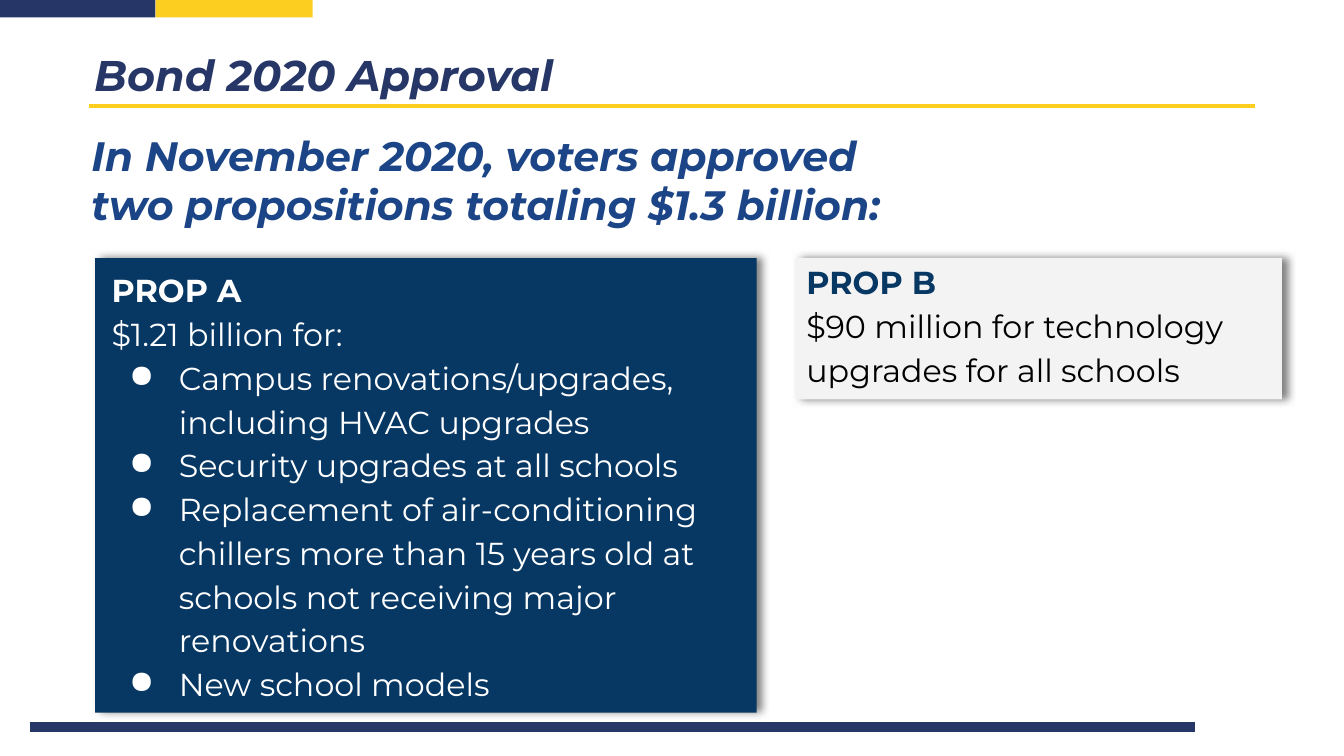
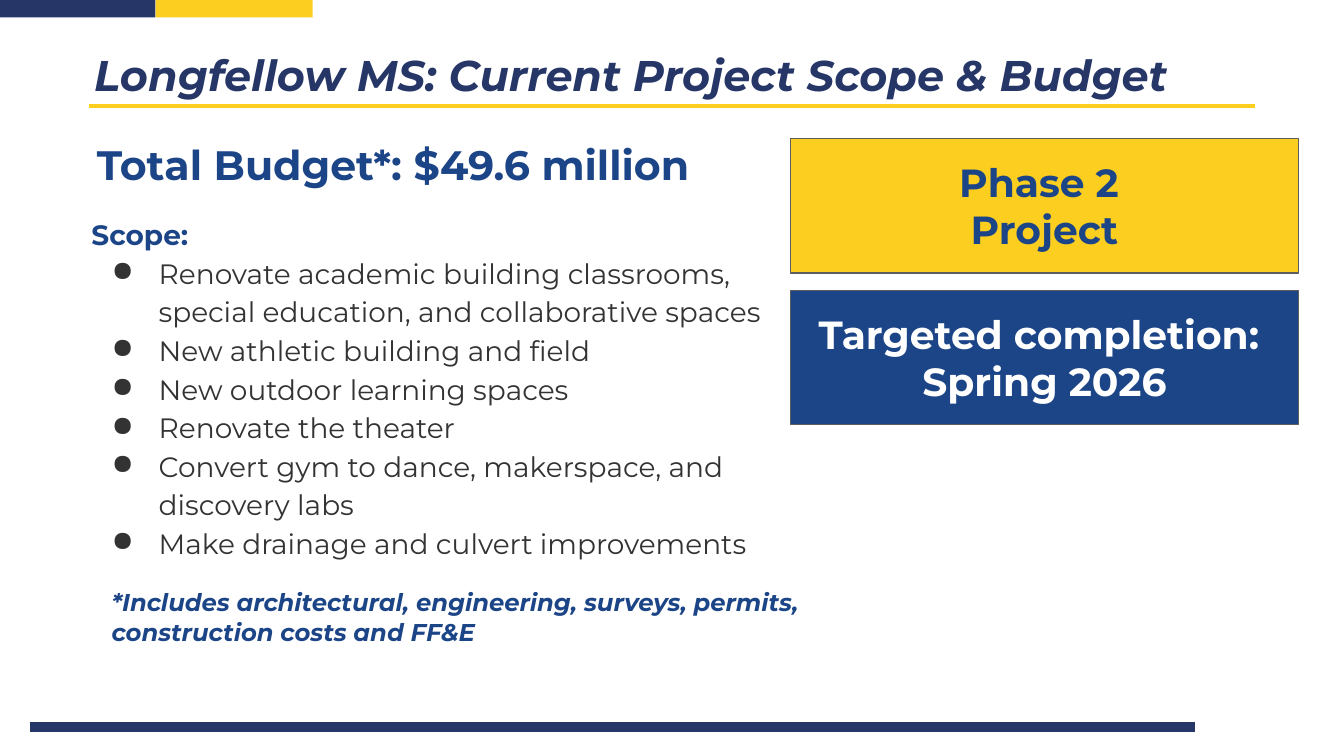
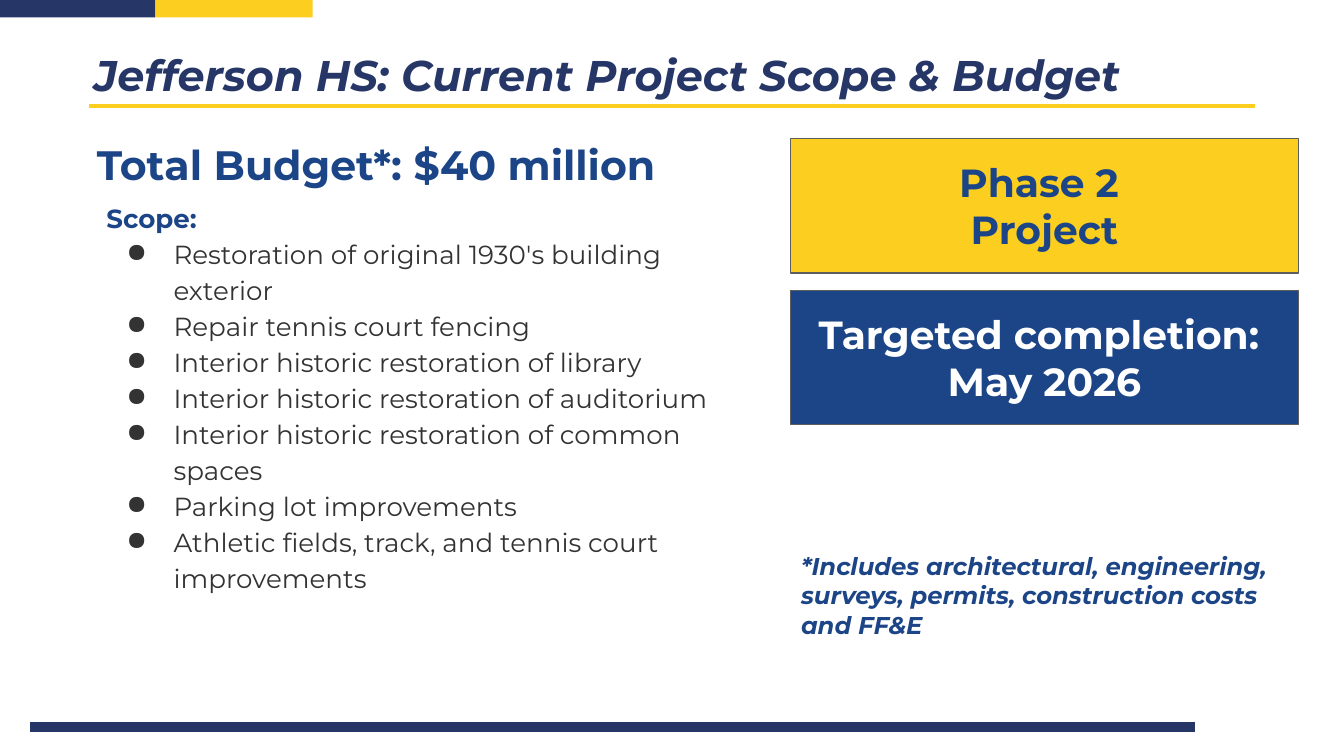
from dataclasses import dataclass, replace
from typing import Optional

from lxml.etree import SubElement
from pptx import Presentation
from pptx.dml.color import RGBColor
from pptx.enum.shapes import MSO_CONNECTOR, MSO_SHAPE
from pptx.enum.text import MSO_ANCHOR, MSO_AUTO_SIZE, PP_ALIGN
from pptx.oxml.ns import qn
from pptx.util import Cm, Pt

FONT = "Montserrat"
NAVY, YELLOW, BLUE, DEEP_BLUE = "253667", "FBCE20", "1C4587", "073763"
WHITE, BLACK, CHARCOAL, GREY, PALE = "FFFFFF", "000000", "333333", "5E5E5E", "F3F3F3"


@dataclass(frozen=True)
class Box:
    """Position and size in centimetres."""
    left: float
    top: float
    width: float
    height: float

    def lengths(self) -> tuple:
        return Cm(self.left), Cm(self.top), Cm(self.width), Cm(self.height)


@dataclass(frozen=True)
class Style:
    size: float
    color: str
    bold: bool = True
    italic: bool = False
    spacing: float = 1.0
    hanging: Optional[float] = None  # bullet indent in centimetres
    align: PP_ALIGN = PP_ALIGN.LEFT


@dataclass(frozen=True)
class Line:
    text: str
    style: Style


@dataclass(frozen=True)
class Project:
    title: str
    budget: str
    completion: str
    scope: tuple
    scope_size: float
    scope_box: Box
    note_box: Box


TITLE = Style(23, NAVY, italic=True)
HEADLINE = Style(22, BLUE, italic=True)
BUDGET = Style(22, BLUE)
NOTE = Style(13, BLUE, italic=True)
PANEL = Style(21, BLUE, align=PP_ALIGN.CENTER)
PROP_HEAD = Style(17, WHITE, spacing=1.15)
PROP_TEXT = replace(PROP_HEAD, bold=False)
PROP_ITEM = replace(PROP_TEXT, hanging=0.94)

TITLE_BOX = Box(1.68, 0.86, 22.02, 1.09)
BUDGET_BOX = Box(1.78, 2.59, 13.16, 1.04)
PANEL_BOX = Box(14.94, 2.62, 9.6, 2.54)
PANEL_PITCH = 2.87
PANEL_PADDING = 0.31
BAND = Box(-0.03, 0, 2.97, 0.33)

PROP_A_ITEMS = (
    "Campus renovations/upgrades, including HVAC upgrades",
    "Security upgrades at all schools",
    "Replacement of air-conditioning chillers more than 15 years old at "
    "schools not receiving major renovations",
    "New school models",
)
BUDGET_NOTE = ("*Includes architectural, engineering, surveys, permits, "
               "construction costs and FF&E")

PROJECTS = (
    Project(
        "Longfellow MS: Current Project Scope & Budget", "$49.6 million", "Spring 2026",
        ("Renovate academic building classrooms, special education, "
         "and collaborative spaces",
         "New athletic building and field",
         "New outdoor learning spaces",
         "Renovate the theater",
         "Convert gym to dance, makerspace, and discovery labs",
         "Make drainage and culvert improvements"),
        15, Box(1.68, 4.01, 13.23, 6.68), Box(2.06, 11.05, 13.16, 1.22)),
    Project(
        "Jefferson HS: Current Project Scope & Budget", "$40 million", "May 2026",
        ("Restoration of original 1930's building exterior",
         "Repair tennis court fencing",
         "Interior historic restoration of library",
         "Interior historic restoration of auditorium",
         "Interior historic restoration of common spaces",
         "Parking lot improvements",
         "Athletic fields, track, and tennis court improvements"),
        14, Box(1.96, 3.78, 12.17, 7.49), Box(15.09, 10.36, 9.6, 1.78)),
)


def rgb(color: str) -> RGBColor:
    return RGBColor.from_string(color)


def add_bullet(paragraph, style: Style) -> None:
    properties = paragraph._p.get_or_add_pPr()
    properties.set("marL", str(Cm(1.27)))
    properties.set("indent", str(-Cm(style.hanging)))
    bullet_color = SubElement(properties, qn("a:buClr"))
    SubElement(bullet_color, qn("a:srgbClr"), val=style.color)
    SubElement(properties, qn("a:buChar"), char="●")


def write(frame, lines: list, side_inset: float = 0.05,
          anchor: MSO_ANCHOR = MSO_ANCHOR.MIDDLE) -> None:
    """Fill a text frame with one paragraph per line."""
    frame.word_wrap = True
    frame.auto_size = MSO_AUTO_SIZE.SHAPE_TO_FIT_TEXT
    frame.vertical_anchor = anchor
    frame.margin_left = frame.margin_right = Cm(side_inset)
    frame.margin_top = frame.margin_bottom = Cm(0.05)
    for number, line in enumerate(lines):
        paragraph = frame.add_paragraph() if number else frame.paragraphs[0]
        style = line.style
        paragraph.text = line.text
        paragraph.alignment = style.align
        paragraph.line_spacing = style.spacing
        if style.hanging is not None:
            add_bullet(paragraph, style)
        font = paragraph.font
        font.name, font.size = FONT, Pt(style.size)
        font.bold, font.italic = style.bold, style.italic
        font.color.rgb = rgb(style.color)


def add_text(slide, box: Box, *lines: Line) -> None:
    write(slide.shapes.add_textbox(*box.lengths()).text_frame, lines)


def add_block(slide, box: Box, fill: str, outline: Optional[str] = None,
              shadowed: bool = False) -> None:
    block = slide.shapes.add_shape(MSO_SHAPE.RECTANGLE, *box.lengths())
    block.shadow.inherit = False
    block.fill.solid()
    block.fill.fore_color.rgb = rgb(fill)
    if outline:
        block.line.color.rgb = rgb(outline)
        block.line.width = Pt(0.75)
    else:
        block.line.fill.background()
    if shadowed:
        effects = block._element.spPr.find(qn("a:effectLst"))
        shadow = SubElement(effects, qn("a:outerShdw"), blurRad=str(Pt(4.5)),
                            dist=str(Pt(3)), dir="0", algn="bl", rotWithShape="0")
        shadow_color = SubElement(shadow, qn("a:srgbClr"), val=BLACK)
        SubElement(shadow_color, qn("a:alpha"), val="50000")


def add_rule(slide, left: float, right: float, height: float,
             color: str, weight: float) -> None:
    rule = slide.shapes.add_connector(
        MSO_CONNECTOR.STRAIGHT, Cm(left), Cm(height), Cm(right), Cm(height))
    rule.line.color.rgb = rgb(color)
    rule.line.width = Pt(weight)
    SubElement(rule._element.spPr, qn("a:effectLst"))


def add_titled_slide(deck, title: str):
    """Add a slide with the shared bands, rules and title."""
    slide = deck.slides.add_slide(deck.slide_layouts[5])
    add_rule(slide, 0.56, 22.58, 13.74, NAVY, 5)
    for number, color in enumerate((NAVY, YELLOW)):
        add_block(slide, replace(BAND, left=BAND.left + number * BAND.width), color)
    add_rule(slide, 1.68, 23.72, 2.01, YELLOW, 2)
    heading = slide.shapes.title
    heading.left, heading.top, heading.width, heading.height = TITLE_BOX.lengths()
    write(heading.text_frame, [Line(title, TITLE)], 0.1, MSO_ANCHOR.TOP)
    return slide


def add_panel(slide, position: int, fill: str, color: str, *texts: str) -> None:
    box = replace(PANEL_BOX, top=PANEL_BOX.top + position * PANEL_PITCH)
    add_block(slide, box, fill, GREY)
    label_box = replace(box, top=box.top + PANEL_PADDING,
                        height=box.height - 2 * PANEL_PADDING)
    style = replace(PANEL, color=color)
    add_text(slide, label_box, *(Line(text, style) for text in texts))


def add_approval_slide(deck) -> None:
    slide = add_titled_slide(deck, "Bond 2020 Approval")
    add_block(slide, Box(15.04, 4.88, 9.19, 2.67), PALE, shadowed=True)
    add_block(slide, Box(1.8, 4.88, 12.5, 8.59), DEEP_BLUE, shadowed=True)
    add_text(slide, Box(1.68, 2.39, 22.53, 2),
             Line("In November 2020, voters approved", HEADLINE),
             Line("two propositions totaling $1.3 billion:", HEADLINE))
    add_text(slide, Box(2.06, 4.9, 12.32, 8.51),
             Line("PROP A", PROP_HEAD),
             Line("$1.21 billion for:", PROP_TEXT),
             *(Line(item, PROP_ITEM) for item in PROP_A_ITEMS))
    add_text(slide, Box(15.19, 4.85, 8.86, 2.51),
             Line("PROP B", replace(PROP_HEAD, color=DEEP_BLUE)),
             Line("$90 million for technology upgrades for all schools",
                  replace(PROP_TEXT, color=BLACK)))


def add_project_slide(deck, project: Project) -> None:
    slide = add_titled_slide(deck, project.title)
    scope_item = Style(project.scope_size, CHARCOAL, bold=False, spacing=1.15, hanging=0.89)
    add_text(slide, project.scope_box,
             Line("Scope:", Style(project.scope_size, BLUE)),
             *(Line(item, scope_item) for item in project.scope))
    add_text(slide, BUDGET_BOX, Line(f"Total Budget*: {project.budget}", BUDGET))
    add_text(slide, project.note_box, Line(BUDGET_NOTE, NOTE))
    add_panel(slide, 0, YELLOW, BLUE, "Phase 2 ", "Project")
    add_panel(slide, 1, BLUE, WHITE, "Targeted completion: ", project.completion)


def main() -> None:
    deck = Presentation()
    deck.slide_width, deck.slide_height = Cm(25.4), Cm(14.29)
    add_approval_slide(deck)
    for project in PROJECTS:
        add_project_slide(deck, project)
    deck.save("out.pptx")


if __name__ == "__main__":
    main()
